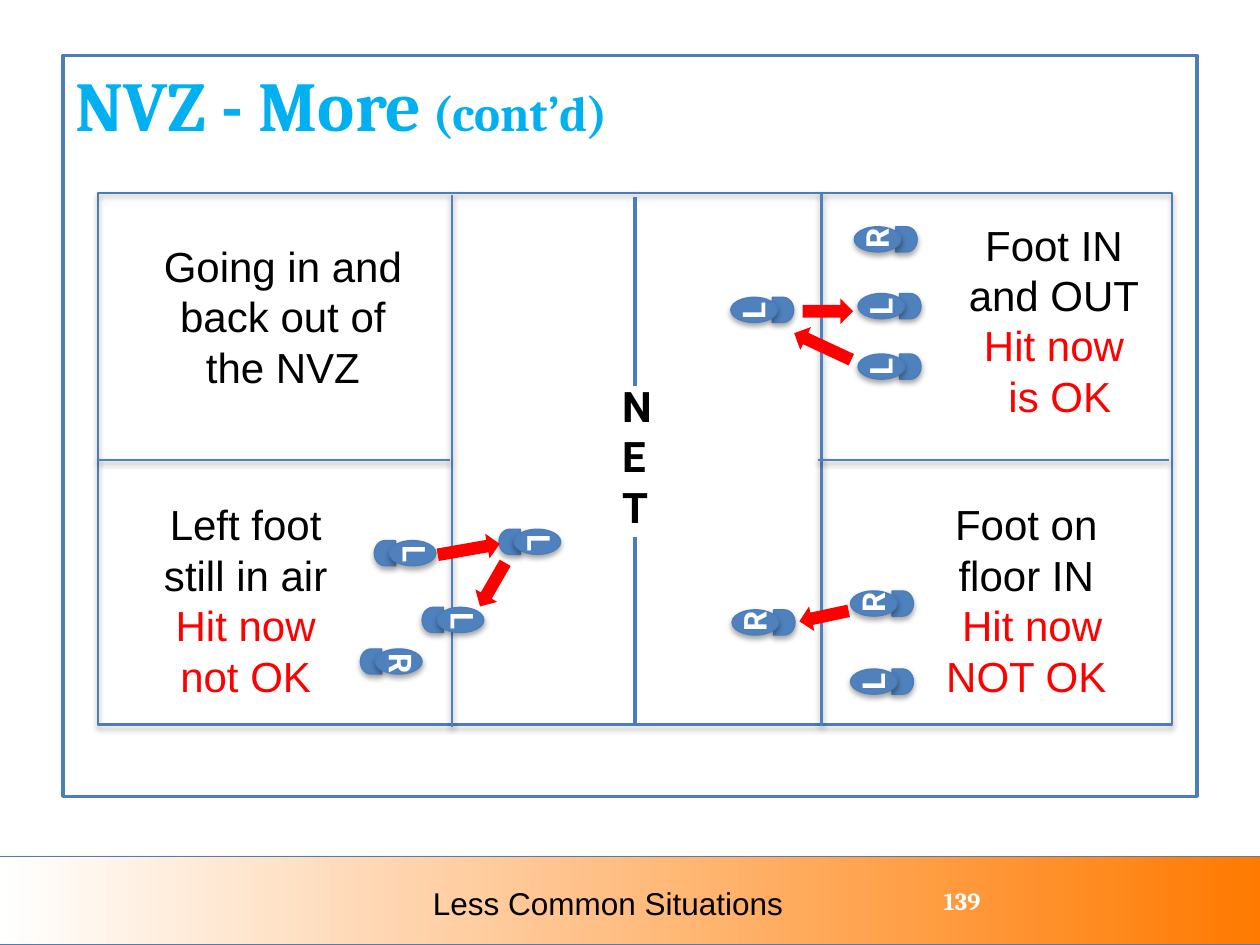
"""Build the court diagram slide about stepping in and out of the NVZ."""
import lxml.etree
import pptx
import pptx.dml.color
import pptx.enum.shapes
import pptx.enum.text
import pptx.oxml.ns
import pptx.util

shape_kind = pptx.enum.shapes.MSO_SHAPE
alignment = pptx.enum.text.PP_ALIGN

theme = {
    "colour": {"outline": "4A7DBA", "blue": "4F81BD", "orange": "FF7A00", "red": "FF0000", "white": "FFFFFF"},
    "text": {
        "title": ({"name": "Cambria", "size": pptx.util.Pt(40), "bold": True}, "00B0F0"),
        "subtitle": ({"name": "Cambria", "size": pptx.util.Pt(28), "bold": True}, "00B0F0"),
        "caption": ({"name": "Arial", "size": pptx.util.Pt(24)}, "000000"),
        "verdict": ({"name": "Arial", "size": pptx.util.Pt(24)}, "FF0000"),
        "net": ({"name": "Roboto", "size": pptx.util.Pt(24), "bold": True}, "000000"),
        "foot": ({"name": "Roboto", "size": pptx.util.Pt(18), "bold": True}, "FFFFFF"),
        "footer": ({"name": "Arial", "size": pptx.util.Pt(18)}, "000000"),
        "number": ({"name": "Cambria", "size": pptx.util.Pt(14), "bold": True}, "FFFFFF"),
    },
    "shadow": {"blurRad": "40000", "dist": "23000", "dir": "5400000", "rotWithShape": "0"},
    "shadow_alpha": "35000",
}

presentation = pptx.Presentation()
presentation.slide_width = pptx.util.Inches(10)
presentation.slide_height = pptx.util.Inches(7.5)
column = presentation.slide_width / 100
row = presentation.slide_height / 75
slide = presentation.slides.add_slide(presentation.slide_layouts[5])


def paint(shape, fill=None, line=None, width=0.75, shadow=False):
    """Set the fill, the line and the shadow of a shape or connector."""
    if fill:
        shape.fill.solid()
        shape.fill.fore_color.rgb = pptx.dml.color.RGBColor.from_string(theme["colour"][fill])
    if line:
        shape.line.color.rgb = pptx.dml.color.RGBColor.from_string(theme["colour"][line])
        shape.line.width = pptx.util.Pt(width)
    else:
        shape.line.fill.background()
    qualified = pptx.oxml.ns.qn
    effects = lxml.etree.SubElement(shape._element.spPr, qualified("a:effectLst"))
    if shadow:
        outer = lxml.etree.SubElement(effects, qualified("a:outerShdw"), theme["shadow"])
        black = lxml.etree.SubElement(outer, qualified("a:srgbClr"), {"val": "000000"})
        lxml.etree.SubElement(black, qualified("a:alpha"), {"val": theme["shadow_alpha"]})


def write(shape, paragraphs, align=alignment.CENTER):
    """Fill a shape with paragraphs, each a list of (text, style) runs."""
    frame = shape.text_frame
    settings = {"word_wrap": True, "auto_size": pptx.enum.text.MSO_AUTO_SIZE.NONE,
                "vertical_anchor": pptx.enum.text.MSO_ANCHOR.TOP}
    for name, value in settings.items():
        setattr(frame, name, value)
    for index, runs in enumerate(paragraphs):
        paragraph = frame.add_paragraph() if index else frame.paragraphs[0]
        paragraph.alignment = align
        for text, style in runs:
            run = paragraph.add_run()
            run.text = text
            formats, colour = theme["text"][style]
            for name, value in formats.items():
                setattr(run.font, name, value)
            run.font.color.rgb = pptx.dml.color.RGBColor.from_string(colour)


footer_bar = slide.shapes.add_shape(
    shape_kind.RECTANGLE, round(-0.1 * column), round(68 * row), round(100.3 * column), round(7 * row))
footer_bar.fill.gradient()
footer_bar.fill.gradient_angle = 0
for stop, colour in zip(footer_bar.fill.gradient_stops, ("white", "orange")):
    stop.color.rgb = pptx.dml.color.RGBColor.from_string(theme["colour"][colour])
paint(footer_bar, line="outline", shadow=True)

title = slide.shapes.title
frame_place = {"left": 5 * column, "top": 4.4 * row, "width": 90 * column, "height": 58.8 * row}
for name, value in frame_place.items():
    setattr(title, name, round(value))
write(title, [[("NVZ - More", "title"), (" (cont’d)", "subtitle")]], alignment.LEFT)
paint(title, line="outline", width=2)

court = slide.shapes.add_shape(
    shape_kind.FLOWCHART_PROCESS, round(7.8 * column), round(15.3 * row), round(85.2 * column), round(42.2 * row))
court.fill.background()
paint(court, line="outline", width=1.25, shadow=True)

court_lines = [
    (35.9, 15.5, 35.9, 57.7, "blue", 1.25, True),
    (65.2, 15.3, 65.2, 57.6, "blue", 1.25, True),
    (7.8, 36.5, 35.7, 36.5, "blue", 1.25, True),
    (64.9, 36.5, 92.8, 36.5, "blue", 1.25, True),
    (50.4, 15.6, 50.4, 30.6, "outline", 2.5, False),
    (50.4, 42.6, 50.4, 57.6, "outline", 2.5, False),
]
for start_x, start_y, end_x, end_y, colour, width, shadow in court_lines:
    court_line = slide.shapes.add_connector(
        pptx.enum.shapes.MSO_CONNECTOR.STRAIGHT,
        round(start_x * column), round(start_y * row), round(end_x * column), round(end_y * row))
    paint(court_line, line=colour, width=width, shadow=shadow)

labels = [
    (73.9, 69.8, 8.1, 3.2, alignment.LEFT, [[("139", "number")]]),
    (30, 69.7, 36.5, 4, alignment.CENTER, [[("Less Common Situations", "footer")]]),
    (48.4, 29.7, 4.3, 13.1, alignment.LEFT, [[("NE", "net")], [("T", "net")]]),
    (11, 18.6, 22.9, 13.1, alignment.CENTER, [[("Going in and back out of the NVZ", "caption")]]),
    (11, 39.1, 17, 17.2, alignment.CENTER,
     [[("Left foot still in air", "caption")], [("Hit now not OK", "verdict")]]),
    (74.4, 16.9, 18.5, 17.1, alignment.CENTER,
     [[("Foot IN and OUT", "caption")], [("Hit now", "verdict")], [(" is OK", "verdict")]]),
    (72.2, 39.1, 18.5, 17.2, alignment.CENTER,
     [[("Foot on floor IN", "caption")], [(" ", "caption"), ("Hit now", "verdict")], [("NOT OK", "verdict")]]),
]
for left, top, width, height, align, paragraphs in labels:
    label = slide.shapes.add_textbox(
        round(left * column), round(top * row), round(width * column), round(height * row))
    write(label, paragraphs, align)

facing_right = {"heel": 0, "sole": 1.2, "letter": 1.6, "turn": 180, "letter_turn": 90}
facing_left = {"heel": 3.3, "sole": 0, "letter": 0.1, "turn": 0, "letter_turn": 270}
feet = [
    ("L", 29.7, 42.9, facing_right), ("L", 33.5, 48.2, facing_right),
    ("L", 39.6, 42, facing_right), ("R", 28.6, 51.5, facing_right),
    ("L", 67.5, 53.1, facing_left), ("L", 58, 23.6, facing_left),
    ("L", 68.1, 23.3, facing_left), ("L", 68.1, 28.1, facing_left),
    ("R", 67.5, 46.9, facing_left), ("R", 67.8, 18, facing_left),
    ("R", 58.1, 48.4, facing_left),
]
for letter, left, top, facing in feet:
    foot = slide.shapes.add_group_shape()
    for part, kind, width in (("heel", shape_kind.FLOWCHART_DELAY, 1.7), ("sole", shape_kind.OVAL, 3.7)):
        shape = foot.shapes.add_shape(
            kind, round((left + facing[part]) * column), round(top * row), round(width * column), round(2 * row))
        shape.rotation = facing["turn"]
        paint(shape, fill="blue", line="outline", shadow=True)
    mark = foot.shapes.add_textbox(
        round((left + facing["letter"]) * column), round((top - 0.95) * row), round(3.3 * column), round(4 * row))
    mark.rotation = facing["letter_turn"]
    write(mark, [[(letter, "foot")]])

steps = [(63.7, 23.7, 4, 180), (34.7, 42.6, 5, 170), (37.1, 45.4, 4, 300), (63.4, 47.9, 4, 348), (62.8, 26.5, 5, 25)]
for left, top, width, turn in steps:
    arrow = slide.shapes.add_shape(
        shape_kind.LEFT_ARROW, round(left * column), round(top * row), round(width * column), round(2 * row))
    arrow.rotation = turn
    paint(arrow, fill="red")

presentation.save("out.pptx")
